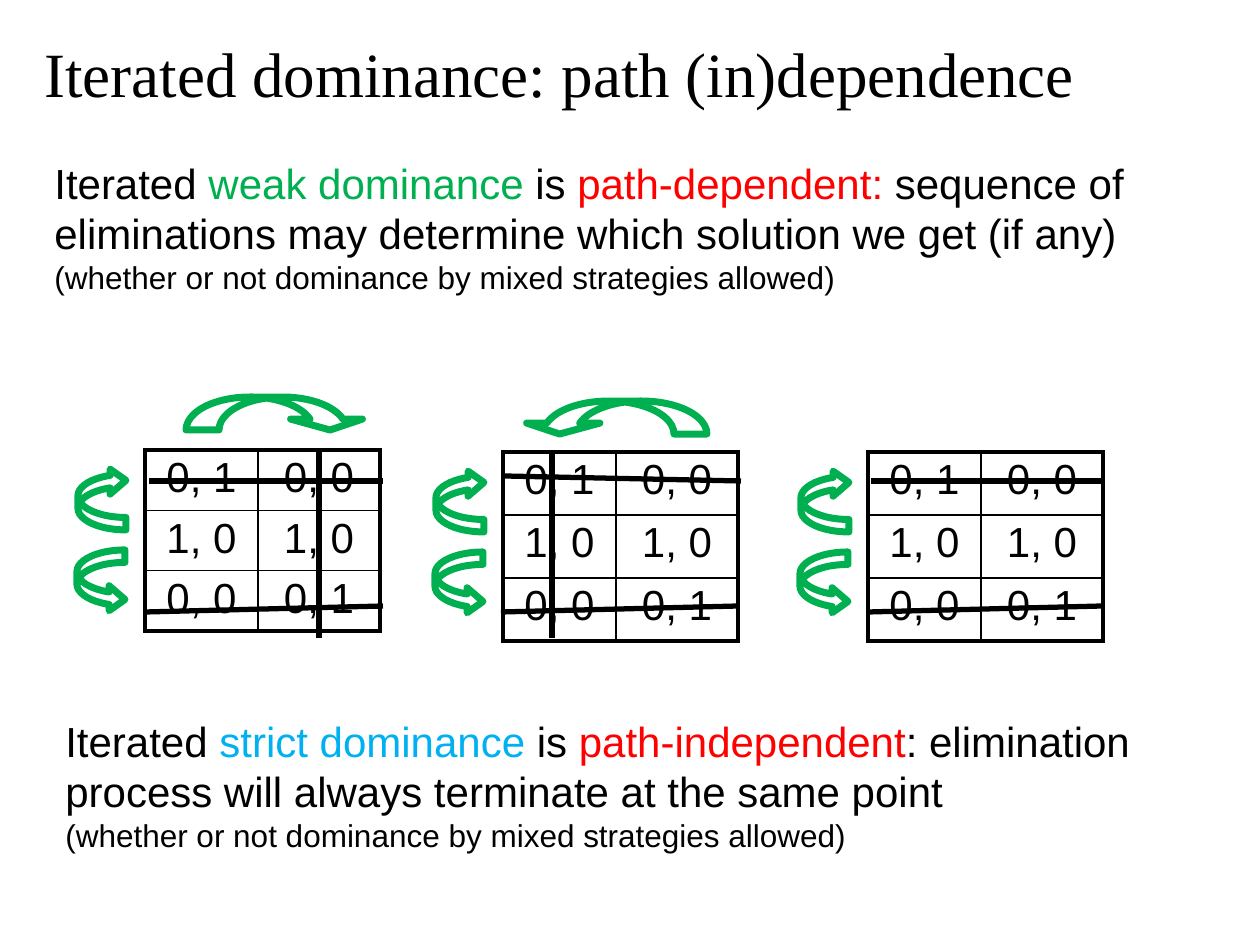
from dataclasses import dataclass

from lxml import etree
from pptx import Presentation
from pptx.dml.color import RGBColor
from pptx.enum.shapes import MSO_CONNECTOR, MSO_SHAPE
from pptx.enum.text import MSO_ANCHOR, PP_ALIGN
from pptx.oxml.ns import qn
from pptx.util import Emu, Pt

STRAIGHT = MSO_CONNECTOR.STRAIGHT
RIGHT_ARROW = MSO_SHAPE.CURVED_RIGHT_ARROW
DOWN_ARROW = MSO_SHAPE.CURVED_DOWN_ARROW
LEFT, CENTER = PP_ALIGN.LEFT, PP_ALIGN.CENTER
TOP, MIDDLE = MSO_ANCHOR.TOP, MSO_ANCHOR.MIDDLE
PX_PER_INCH = 126


@dataclass(frozen=True)
class Theme:
    black: str = "000000"
    green: str = "00B050"
    red: str = "FF0000"
    blue: str = "00B0F0"
    title_font: str = "Times New Roman"
    body_font: str = "Arial"
    title_size: int = 36
    body_size: int = 24
    note_size: int = 18
    outer_border: float = 2.25
    inner_border: float = 1
    strike: float = 3
    arrow: float = 4


THEME = Theme()
PAYOFFS = [["0, 1", "0, 0"], ["1, 0", "1, 0"], ["0, 0", "0, 1"]]
COLUMN_WIDTHS = [113, 122]
NOTE = "(whether or not dominance by mixed strategies allowed)"


def px(value):
    return Emu(round(value * 914400 / PX_PER_INCH))


def add_run(paragraph, text, size=THEME.body_size, color=THEME.black, font=THEME.body_font):
    run = paragraph.add_run()
    run.text = text
    run.font.name = font
    run.font.size = Pt(size)
    run.font.color.rgb = RGBColor.from_string(color)


def add_title(slide, box, text):
    title = slide.shapes.title
    title.left, title.top, title.width, title.height = map(px, box)
    title.text_frame.vertical_anchor = MIDDLE
    paragraph = title.text_frame.paragraphs[0]
    paragraph.alignment = LEFT
    add_run(paragraph, text, THEME.title_size, font=THEME.title_font)


def add_statement(slide, box, parts):
    """A coloured sentence with a smaller note under it."""
    frame = slide.shapes.add_textbox(*map(px, box)).text_frame
    frame.word_wrap = True
    for text, color in parts:
        add_run(frame.paragraphs[0], text, color=color)
    add_run(frame.add_paragraph(), NOTE, THEME.note_size)


def set_border(cell, side, width):
    line = etree.SubElement(cell._tc.get_or_add_tcPr(), qn(f"a:ln{side}"), w=str(Pt(width)))
    fill = etree.SubElement(line, qn("a:solidFill"))
    etree.SubElement(fill, qn("a:srgbClr"), val=THEME.black)


def add_payoffs(slide, left, top, row_height):
    rows, columns = len(PAYOFFS), len(COLUMN_WIDTHS)
    table = slide.shapes.add_table(
        rows, columns, px(left), px(top), px(sum(COLUMN_WIDTHS)), px(rows * row_height)
    ).table
    table.first_row = table.horz_banding = False
    for column, width in zip(table.columns, COLUMN_WIDTHS):
        column.width = px(width)
    for r, values in enumerate(PAYOFFS):
        table.rows[r].height = px(row_height)
        for c, value in enumerate(values):
            cell = table.cell(r, c)
            cell.margin_top = cell.margin_bottom = px(5)
            cell.vertical_anchor = TOP
            outer = {"L": c == 0, "R": c == columns - 1, "T": r == 0, "B": r == rows - 1}
            for side, is_outer in outer.items():
                set_border(cell, side, THEME.outer_border if is_outer else THEME.inner_border)
            cell.fill.background()
            paragraph = cell.text_frame.paragraphs[0]
            paragraph.alignment = CENTER
            add_run(paragraph, value)


def add_strike(slide, left, top, ends):
    x1, y1, x2, y2 = ends
    line = slide.shapes.add_connector(
        STRAIGHT, px(left + x1), px(top + y1), px(left + x2), px(top + y2)
    )
    line.line.color.rgb = RGBColor.from_string(THEME.black)
    line.line.width = Pt(THEME.strike)
    etree.SubElement(line._element.spPr, qn("a:effectLst"))


def add_arrow(slide, kind, box, adjustments, flip=None):
    arrow = slide.shapes.add_shape(kind, *map(px, box))
    arrow.shadow.inherit = False
    arrow.fill.background()
    arrow.line.color.rgb = RGBColor.from_string(THEME.green)
    arrow.line.width = Pt(THEME.arrow)
    for index, value in enumerate(adjustments):
        arrow.adjustments[index] = value
    if flip:
        arrow._element.spPr.find(qn("a:xfrm")).set(flip, "1")


def add_game(slide, left, top, row_height, strikes, column_arrow=None):
    """Payoff table with struck strategies and dominance arrows."""
    add_payoffs(slide, left, top, row_height)
    for ends in strikes:
        add_strike(slide, left, top, ends)
    # Row dominance: middle row over bottom row, then over top row
    for x, y, flip in [(-68, 100, None), (-67, 18, "flipV")]:
        add_arrow(slide, RIGHT_ARROW, (left + x, top + y, 48, 62), (0.26, 0.52, 0.33), flip)
    # Column dominance
    if column_arrow:
        (x, y, width, height), adjustments, flip = column_arrow
        add_arrow(slide, DOWN_ARROW, (left + x, top + y, width, height), adjustments, flip)


def main():
    presentation = Presentation()
    presentation.slide_width, presentation.slide_height = px(1260), px(945)
    slide = presentation.slides.add_slide(presentation.slide_layouts[5])

    add_title(slide, (32, 21, 1260, 103), "Iterated dominance: path (in)dependence")

    # Weak dominance
    add_statement(slide, (42, 151, 1120, 152), [
        ("Iterated ", THEME.black),
        ("weak dominance ", THEME.green),
        ("is ", THEME.black),
        ("path-dependent:", THEME.red),
        (" sequence of eliminations may determine which solution we get (if any)", THEME.black),
    ])

    # Three elimination paths
    add_game(slide, 145, 450, 60,
             [(0, 162, 238, 156), (174, 2, 174, 188), (4, 31, 238, 31)],
             ((41, -53, 180, 33), (1.09, 2.18, 0.33), None))
    add_game(slide, 503, 452, 63,
             [(-2, 160, 235, 154), (49, 186, 49, 0), (1, 24, 238, 29)],
             ((20, -51, 184, 33), (1.11, 2.22, 0.33), "flipH"))
    add_game(slide, 868, 452, 63,
             [(0, 160, 234, 154), (3, 29, 234, 29)])

    # Strict dominance
    add_statement(slide, (53, 709, 1134, 152), [
        ("Iterated ", THEME.black),
        ("strict dominance ", THEME.blue),
        ("is ", THEME.black),
        ("path-independent", THEME.red),
        (": elimination process will always terminate at the same point", THEME.black),
    ])

    presentation.save("out.pptx")


if __name__ == "__main__":
    main()
